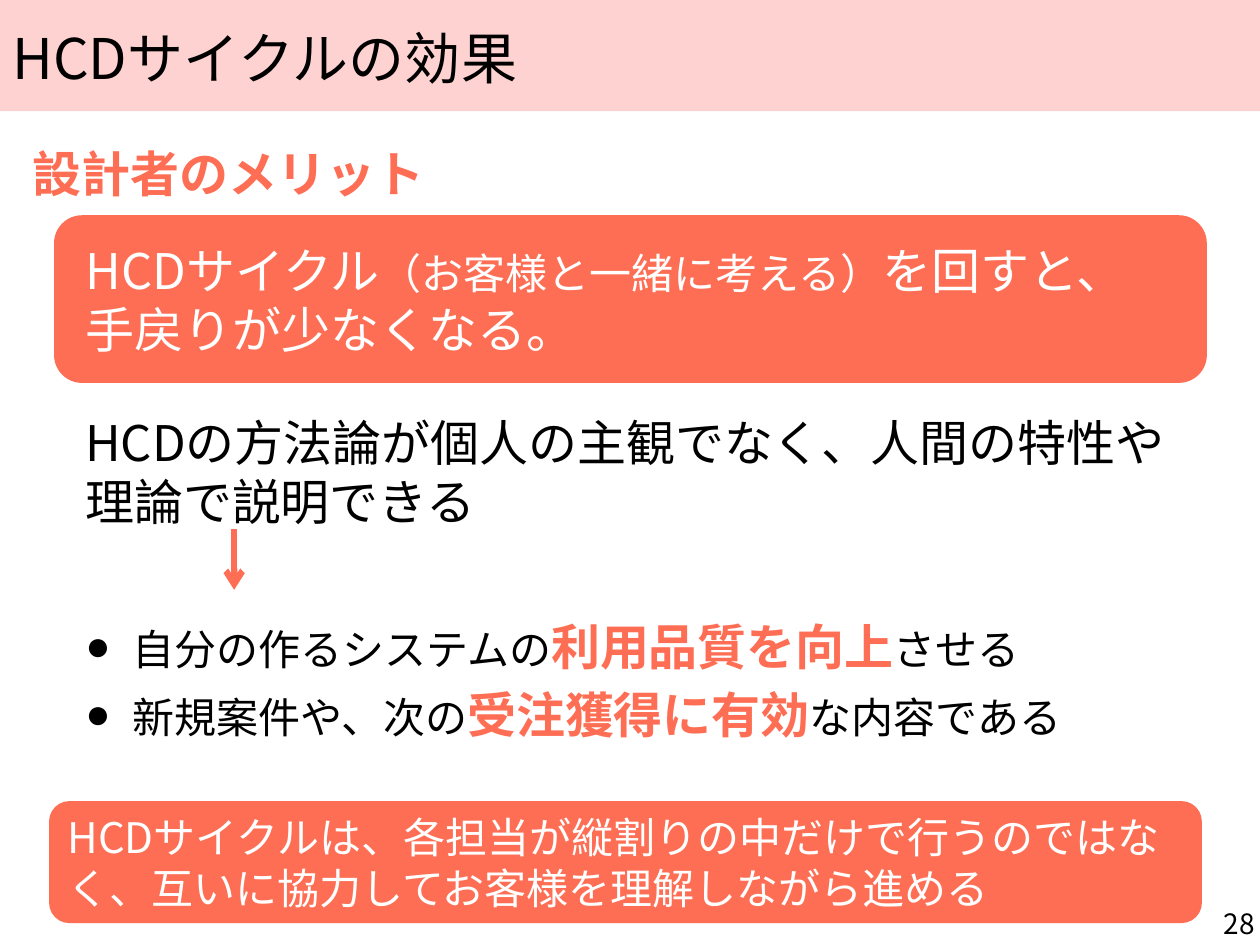
from pptx import Presentation
from pptx import util as u
from pptx.dml.color import RGBColor
from pptx.enum import shapes, text
from pptx.oxml.ns import qn
from lxml import etree

FONT = "Noto Sans CJK JP"
COLORS = {"band": "FED2D1", "accent": "FE6E54", "ink": "000000", "paper": "FFFFFF"}
ANCHOR = text.MSO_ANCHOR
ALIGN = text.PP_ALIGN


def color(name):
    return RGBColor.from_string(COLORS[name])


def place(sp, left, top, width, height):
    sp.left, sp.top, sp.width, sp.height = map(u.Cm, (left, top, width, height))


def add_run(p, words, size, ink, bold):
    r = p.add_run()
    r.text = words
    r.font.size, r.font.bold, r.font.name = u.Pt(size), bold, FONT
    r.font.color.rgb = color(ink)
    etree.SubElement(r._r.get_or_add_rPr(), qn("a:ea"), typeface=FONT)


def add_bullet(p, indent):
    pPr = p._p.get_or_add_pPr()
    pPr.set("marL", str(u.Cm(indent)))
    pPr.set("indent", str(-u.Cm(indent)))
    etree.SubElement(pPr, qn("a:buChar"), char="●")


def write(sp, paragraphs, size=28, ink="ink", bold=False, anchor=ANCHOR.TOP,
          align=ALIGN.LEFT, margins=(0.25, 0.13, 0.25, 0.13), wrap=True,
          before=0, spacing=None, left_indent=0, bullet=0):
    tf = sp.text_frame
    tf.auto_size = text.MSO_AUTO_SIZE.NONE
    tf.word_wrap, tf.vertical_anchor = wrap, anchor
    tf.margin_left, tf.margin_top, tf.margin_right, tf.margin_bottom = map(u.Cm, margins)
    for i, runs in enumerate(paragraphs):
        p = tf.add_paragraph() if i else tf.paragraphs[0]
        p.alignment, p.space_before = align, u.Pt(before)
        if spacing:
            p.line_spacing = u.Pt(spacing)
        if left_indent:
            p._p.get_or_add_pPr().set("marL", str(u.Cm(left_indent)))
        if bullet:
            add_bullet(p, bullet)
        for words, changes in runs:
            look = {"size": size, "ink": ink, "bold": bold, **changes}
            for n, line in enumerate(words.split("\n")):
                if n:
                    p.add_line_break()
                add_run(p, line, **look)


def add_block(s, kind, fill, *box):
    sp = s.shapes.add_shape(kind, *map(u.Cm, box))
    sp.shadow.inherit = False
    sp.fill.solid()
    sp.fill.fore_color.rgb = color(fill)
    sp.line.fill.background()
    return sp


def add_callout(s, box, runs, **look):
    sp = add_block(s, shapes.MSO_SHAPE.ROUNDED_RECTANGLE, "accent", *box)
    write(sp, [runs], ink="paper", anchor=ANCHOR.MIDDLE, **look)


def add_label(s, box, words, **look):
    write(s.shapes.add_textbox(*map(u.Cm, box)), [[(words, {})]], **look)


def add_arrow(s, x, top, bottom):
    line = s.shapes.add_connector(shapes.MSO_CONNECTOR.STRAIGHT,
                                  *map(u.Cm, (x, top, x, bottom)))
    line.line.color.rgb = color("accent")
    line.line.width = u.Pt(3.5)
    etree.SubElement(line.line._get_or_add_ln(), qn("a:tailEnd"), type="arrow")
    etree.SubElement(line._element.spPr, qn("a:effectLst"))


def main():
    prs = Presentation()
    prs.slide_width, prs.slide_height = u.Cm(25.4), u.Cm(19.05)
    s = prs.slides.add_slide(prs.slide_layouts[1])
    title, body = s.shapes.title, s.placeholders[1]
    strong = {"size": 28, "ink": "accent", "bold": True}

    band = add_block(s, shapes.MSO_SHAPE.RECTANGLE, "band", 0, 0, 25.4, 2.24)
    title._element.addprevious(band._element)
    place(title, 0, 0.2, 24, 2.1)
    write(title, [[("HCDサイクルの効果", {})]], size=32, anchor=ANCHOR.MIDDLE,
          margins=(0.25, 0.5, 0.25, 0.1), spacing=22)

    add_label(s, (0.41, 2.77, 8.48, 1.45), "設計者のメリット", wrap=False,
              ink="accent", bold=True)
    add_callout(s, (1.09, 4.34, 23.24, 3.38), [
        ("HCDサイクル", {}),
        ("（お客様と一緒に考える）", {"size": 24}),
        ("を回すと、\n手戻りが少なくなる。", {}),
    ], before=5.6, left_indent=0.23)
    add_label(s, (1.47, 8.33, 22.25, 2.36),
              "HCDの方法論が個人の主観でなく、人間の特性や理論で説明できる",
              anchor=ANCHOR.MIDDLE, margins=(0.25, 0.13, 0, 0.13), before=5.6)
    add_arrow(s, 4.72, 10.67, 11.89)

    place(body, 1.47, 12.29, 22.25, 3.66)
    write(body, [
        [("自分の作るシステムの", {}), ("利用品質を向上", strong), ("させる", {})],
        [("新規案件や、次の", {}), ("受注獲得に有効", strong), ("な内容である", {})],
    ], size=24, before=5.6, bullet=0.95)

    add_callout(s, (0.99, 16.15, 23.24, 2.46), [
        ("HCDサイクルは、各担当が縦割りの中だけで行うのではなく、"
         "互いに協力してお客様を理解しながら進める", {}),
    ], size=24, before=4.8)
    add_label(s, (23.9, 18.03, 1.5, 1.02), "28", size=16, anchor=ANCHOR.BOTTOM,
              align=ALIGN.RIGHT, margins=(0.1, 0.1, 0.1, 0.1))
    prs.save("out.pptx")


if __name__ == "__main__":
    main()
